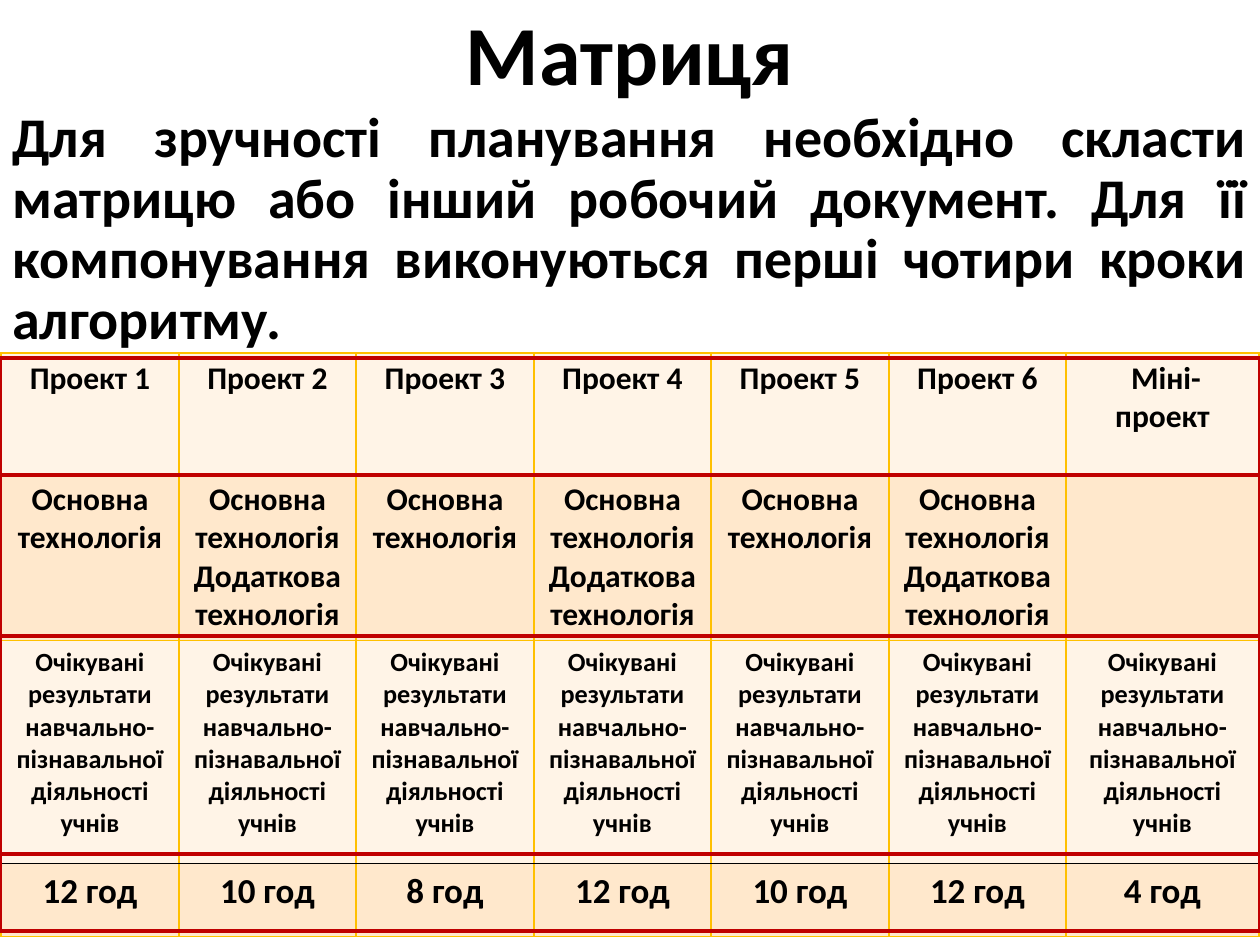
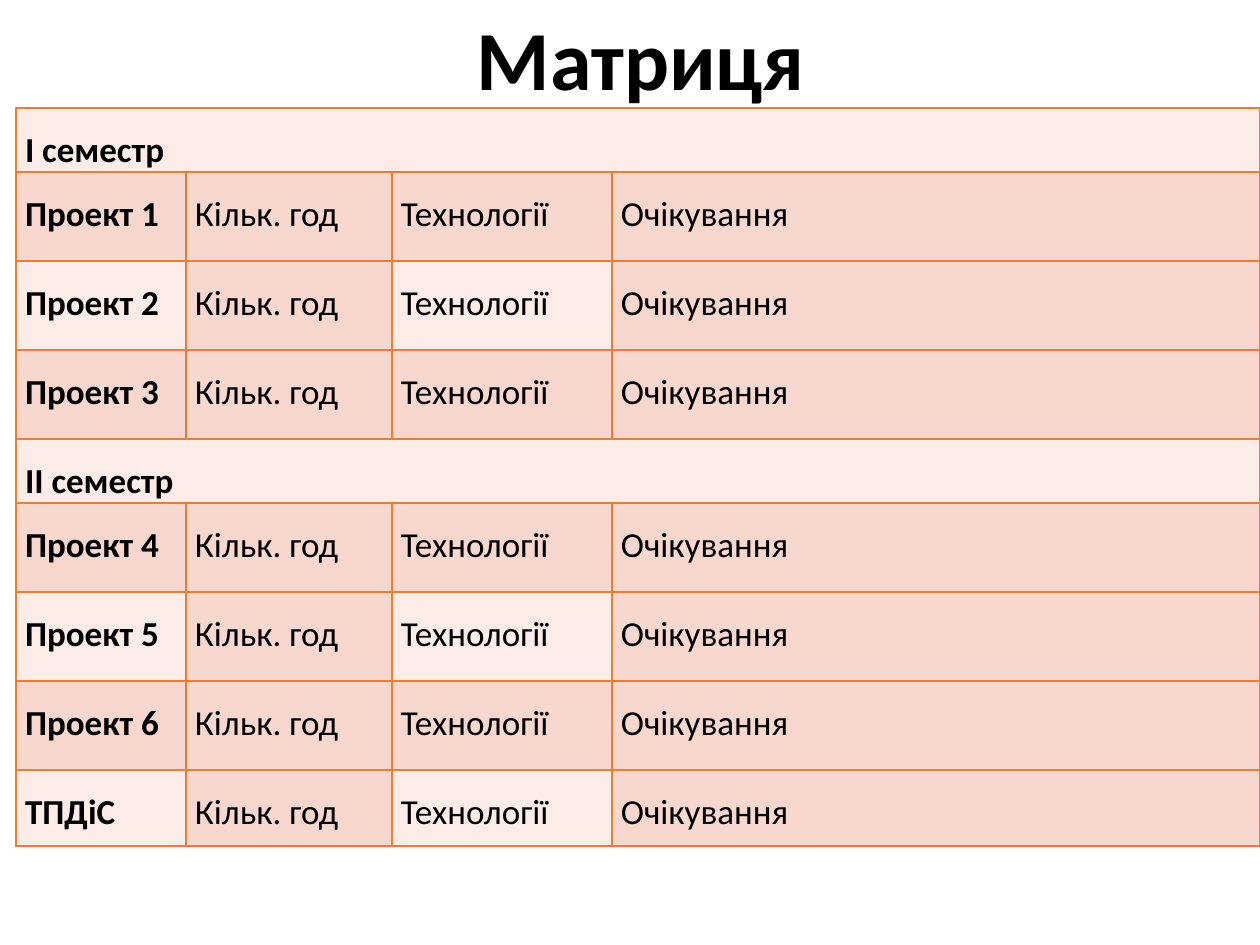
from dataclasses import dataclass
from itertools import pairwise

from lxml import etree
from pptx import Presentation
from pptx.dml.color import RGBColor
from pptx.enum.shapes import MSO_SHAPE
from pptx.enum.text import MSO_ANCHOR, PP_ALIGN
from pptx.oxml.ns import qn
from pptx.util import Pt

RECT = MSO_SHAPE.RECTANGLE
TOP, MIDDLE = MSO_ANCHOR.TOP, MSO_ANCHOR.MIDDLE
LEFT, CENTER, JUSTIFY = PP_ALIGN.LEFT, PP_ALIGN.CENTER, PP_ALIGN.JUSTIFY
SCALE = 914400 / 126


@dataclass(frozen=True)
class Theme:
    font: str = "Calibri"
    ink: str = "000000"
    gold: str = "FFC000"
    red: str = "C00000"
    orange: str = "ED7D31"
    cream: str = "FFF4E7"
    peach: str = "FFE8CC"
    pale: str = "FCECE8"
    rose: str = "F8D7CE"
    title: int = 48
    body: int = 32
    large: int = 20
    medium: int = 18
    small: int = 15
    edge: float = 1
    frame: float = 2.5


THEME = Theme()


def px(size):
    return round(size * SCALE)


def color(code):
    return RGBColor.from_string(code)


def write(frame, text, size=THEME.large, bold=True, align=CENTER, space=1.0):
    for index, line in enumerate(text.split("\n")):
        para = frame.add_paragraph() if index else frame.paragraphs[0]
        para.alignment = align
        para.line_spacing = space
        run = para.add_run()
        run.text = line
        run.font.name = THEME.font
        run.font.size = Pt(size)
        run.font.bold = bold
        run.font.color.rgb = color(THEME.ink)


def add_text(slide, text, left, top, width, height, anchor=TOP, **style):
    box = slide.shapes.add_textbox(px(left), px(top), px(width), px(height))
    frame = box.text_frame
    frame.word_wrap = True
    frame.vertical_anchor = anchor
    write(frame, text, space=0.9, **style)


def add_title(slide, left, height):
    add_text(slide, "Матриця", left, 0, 1086, height, anchor=MIDDLE, size=THEME.title)


def add_frame(slide, top, bottom):
    box = slide.shapes.add_shape(RECT, 0, px(top), px(1260), px(bottom - top))
    box.shadow.inherit = False
    box.fill.background()
    box.line.color.rgb = color(THEME.red)
    box.line.width = Pt(THEME.frame)


def add_grid(slide, left, top, widths, heights):
    shape = slide.shapes.add_table(
        len(heights), len(widths), px(left), px(top), px(sum(widths)), px(sum(heights))
    )
    grid = shape.table
    grid.first_row = False
    grid.horz_banding = False
    for col, width in zip(grid.columns, widths):
        col.width = px(width)
    for row, height in zip(grid.rows, heights):
        row.height = px(height)
    return grid


def paint(cell, fill, edge, **sides):
    props = cell._tc.get_or_add_tcPr()
    for side in "LRTB":
        line = etree.SubElement(props, qn(f"a:ln{side}"), w=str(Pt(THEME.edge)))
        solid = etree.SubElement(line, qn("a:solidFill"))
        etree.SubElement(solid, qn("a:srgbClr"), val=sides.get(side, edge))
    cell.fill.solid()
    cell.fill.fore_color.rgb = color(fill)


def build_plan(slide):
    main = "Основна технологія"
    both = main + "\nДодаткова технологія"
    goal = "Очікувані результати навчально-пізнавальної діяльності учнів"
    hours = [12, 10, 8, 12, 10, 12, 4]
    rows = [
        ([f"Проект {n}" for n in range(1, 7)] + [" Міні-проект"], THEME.medium, {}),
        ([main, both] * 3 + [""], THEME.medium, {}),
        ([goal] * 7, THEME.small, {"B": THEME.ink}),
        ([f"{n} год" for n in hours], THEME.large, {"T": THEME.ink}),
    ]
    grid = add_grid(slide, 1, 353, [178, 177] * 3 + [193], [121, 165, 223, 73])
    for r, (texts, size, sides) in enumerate(rows):
        for c, text in enumerate(texts):
            cell = grid.cell(r, c)
            paint(cell, THEME.peach if r % 2 else THEME.cream, THEME.gold, **sides)
            if text:
                write(cell.text_frame, text, size=size)
    add_title(slide, 87, 116)
    add_text(
        slide,
        "Для зручності планування необхідно скласти матрицю або інший робочий "
        "документ. Для її компонування виконуються перші чотири кроки алгоритму.",
        0, 103, 1260, 218, size=THEME.body, align=JUSTIFY,
    )
    for top, bottom in pairwise([358, 475, 636, 854, 931]):
        add_frame(slide, top, bottom)


def build_terms(slide):
    add_title(slide, 98, 126)
    names = [
        "І семестр", "Проект 1", "Проект 2", "Проект 3",
        "ІІ семестр", "Проект 4", "Проект 5", "Проект 6", "ТПДіС",
    ]
    heads = ["Кільк. год", "Технології", "Очікування"]
    heights = ([64] + [89] * 3) * 2 + [76]
    grid = add_grid(slide, 16, 108, [170, 206, 220, 648], heights)
    for r, name in enumerate(names):
        term = name.endswith("семестр")
        if term:
            grid.cell(r, 0).merge(grid.cell(r, 3))
        for c, text in enumerate([name] + heads):
            cell = grid.cell(r, c)
            light = term or (r % 2 == 0 and c % 2 == 0)
            paint(cell, THEME.pale if light else THEME.rose, THEME.orange)
            cell.margin_left = cell.margin_right = px(9)
            cell.margin_top = cell.margin_bottom = 0
            if c == 0 or not term:
                align = LEFT if c else JUSTIFY
                write(cell.text_frame, text, bold=c == 0, align=align, space=1.5)


def main():
    deck = Presentation()
    deck.slide_width, deck.slide_height = px(1260), px(945)
    for build in (build_plan, build_terms):
        build(deck.slides.add_slide(deck.slide_layouts[6]))
    deck.save("out.pptx")


if __name__ == "__main__":
    main()
